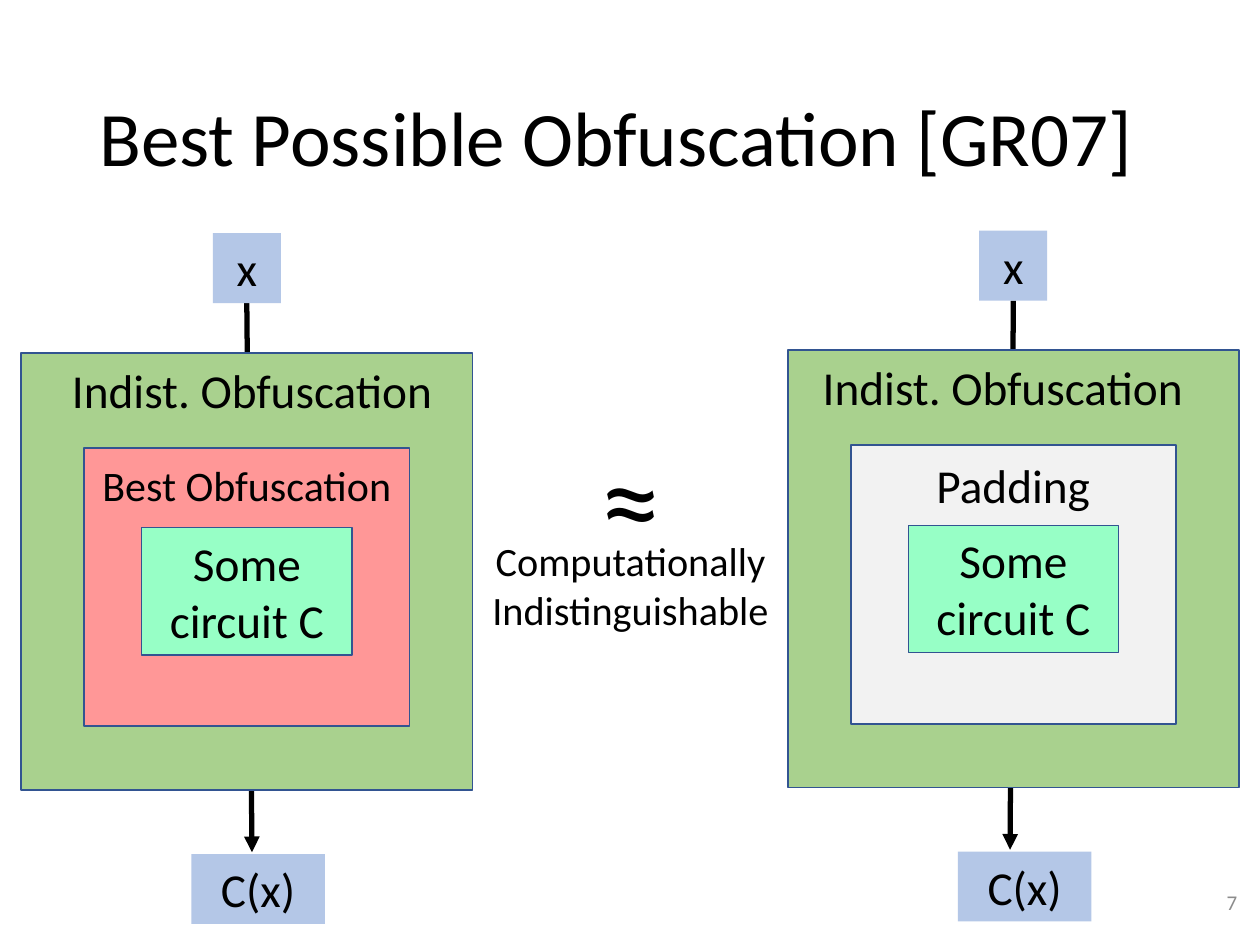
from lxml.etree import SubElement
from pptx import Presentation
from pptx.dml.color import RGBColor
from pptx.enum.shapes import MSO_CONNECTOR, MSO_SHAPE
from pptx.enum.text import MSO_ANCHOR, MSO_AUTO_SIZE, PP_ALIGN
from pptx.oxml.ns import qn
from pptx.util import Pt

BLACK = RGBColor(0x00, 0x00, 0x00)
GRAY = RGBColor(0x8C, 0x8C, 0x8C)
GREEN = RGBColor(0xA9, 0xD1, 0x8E)
RED = RGBColor(0xFF, 0x97, 0x97)
PALE = RGBColor(0xF2, 0xF2, 0xF2)
MINT = RGBColor(0x97, 0xFF, 0xC6)
BLUE = RGBColor(0xB4, 0xC7, 0xE7)
EDGE = RGBColor(0x32, 0x54, 0x91)

TITLE = "Best Possible Obfuscation [GR07]"
# Each side: corner of its outer box, inner fill, inner label and size,
# left and width of the outer label, x where the arrow ends
SIDES = [
    dict(left=12.2, top=201.6, fill=RED, label="Best Obfuscation", size=24,
         head=(18, 252), tip=144),
    dict(left=450.2, top=200.2, fill=PALE, label="Padding", size=27,
         head=(450, 246), tip=577.2),
]
# Offsets from the corner of the outer box, then width and height
OUTER = (0, 0, 257.8, 249.8)
INNER = (36, 54.3, 185.8, 159.1)
CORE = (68.8, 100, 120.2, 72.7)
INPUT = (109.4, -68.4, 38.9, 40)
OUTPUT = (97.2, 286.4, 76.3, 40)
LABEL = (29.8, 57.2, 198, 40)
TIP_DY = 285.4
# Text, place, size
MIDDLE = [
    ("≈", (307.4, 237.6, 106.6, 92.2), 70),
    ("Computationally Indistinguishable", (257.8, 303.1, 205.2, 63.4), 23),
]


def write(shape, text, size, color=BLACK, align=PP_ALIGN.CENTER,
          anchor=MSO_ANCHOR.TOP, fit=MSO_AUTO_SIZE.SHAPE_TO_FIT_TEXT):
    frame = shape.text_frame
    frame.text = text
    form = dict(word_wrap=True, auto_size=fit, vertical_anchor=anchor)
    for name, value in form.items():
        setattr(frame, name, value)
    para = frame.paragraphs[0]
    para.alignment = align
    for name, value in dict(name="Calibri", size=Pt(size)).items():
        setattr(para.font, name, value)
    para.font.color.rgb = color
    return para


def add_text(shapes, place, text, size, **form):
    write(shapes.add_textbox(*map(Pt, place)), text, size, **form)


def add_box(shapes, place, fill, edge=0, text=""):
    box = shapes.add_shape(MSO_SHAPE.RECTANGLE, *map(Pt, place))
    box.shadow.inherit = False
    box.fill.solid()
    box.fill.fore_color.rgb = fill
    if edge:
        box.line.color.rgb = EDGE
        box.line.width = Pt(edge)
    else:
        box.line.fill.background()
    if text:
        write(box, text, 27)
    return box


def add_arrow(shapes, *ends):
    arrow = shapes.add_connector(MSO_CONNECTOR.STRAIGHT, *map(Pt, ends))
    arrow.line.color.rgb = BLACK
    arrow.line.width = Pt(3)
    props = arrow.line._get_or_add_ln()
    SubElement(props, qn("a:tailEnd"), type="triangle")
    SubElement(props.getparent(), qn("a:effectLst"))
    return arrow


def add_side(shapes, left, top, fill, label, size, head, tip):
    def put(part):
        dx, dy, width, height = part
        return left + dx, top + dy, width, height

    x, y, width, height = put(INPUT)
    arrow = add_arrow(shapes, x + width / 2, y + height, tip, top + TIP_DY)
    add_box(shapes, put(OUTER), GREEN, 1)
    add_box(shapes, put(INNER), fill, 1)
    add_box(shapes, put(CORE), MINT, 0.75, "Some circuit C")
    add_text(shapes, put(LABEL), label, size)
    start, wide = head
    add_text(shapes, (start, top + 1, wide, 40), "Indist. Obfuscation", 27)
    source = add_box(shapes, put(INPUT), BLUE, text="x")
    add_box(shapes, put(OUTPUT), BLUE, text="C(x)")
    arrow.begin_connect(source, 2)


def main():
    deck = Presentation()
    deck.slide_width, deck.slide_height = Pt(720), Pt(540)
    slide = deck.slides.add_slide(deck.slide_layouts[5])
    shapes = slide.shapes

    title = shapes.title
    place = dict(left=49.7, top=28.8, width=620.6, height=104.4)
    for name, value in place.items():
        setattr(title, name, Pt(value))
    para = write(title, TITLE, 44, align=PP_ALIGN.LEFT,
                 anchor=MSO_ANCHOR.MIDDLE, fit=MSO_AUTO_SIZE.NONE)
    para.line_spacing = 0.9

    for side in SIDES:
        add_side(shapes, **side)
    for text, spot, size in MIDDLE:
        add_text(shapes, spot, text, size)
    add_text(shapes, (678.2, 496.8, 36, 37.4), "7", 12, color=GRAY,
             align=PP_ALIGN.RIGHT, anchor=MSO_ANCHOR.MIDDLE,
             fit=MSO_AUTO_SIZE.NONE)
    deck.save("out.pptx")


if __name__ == "__main__":
    main()
